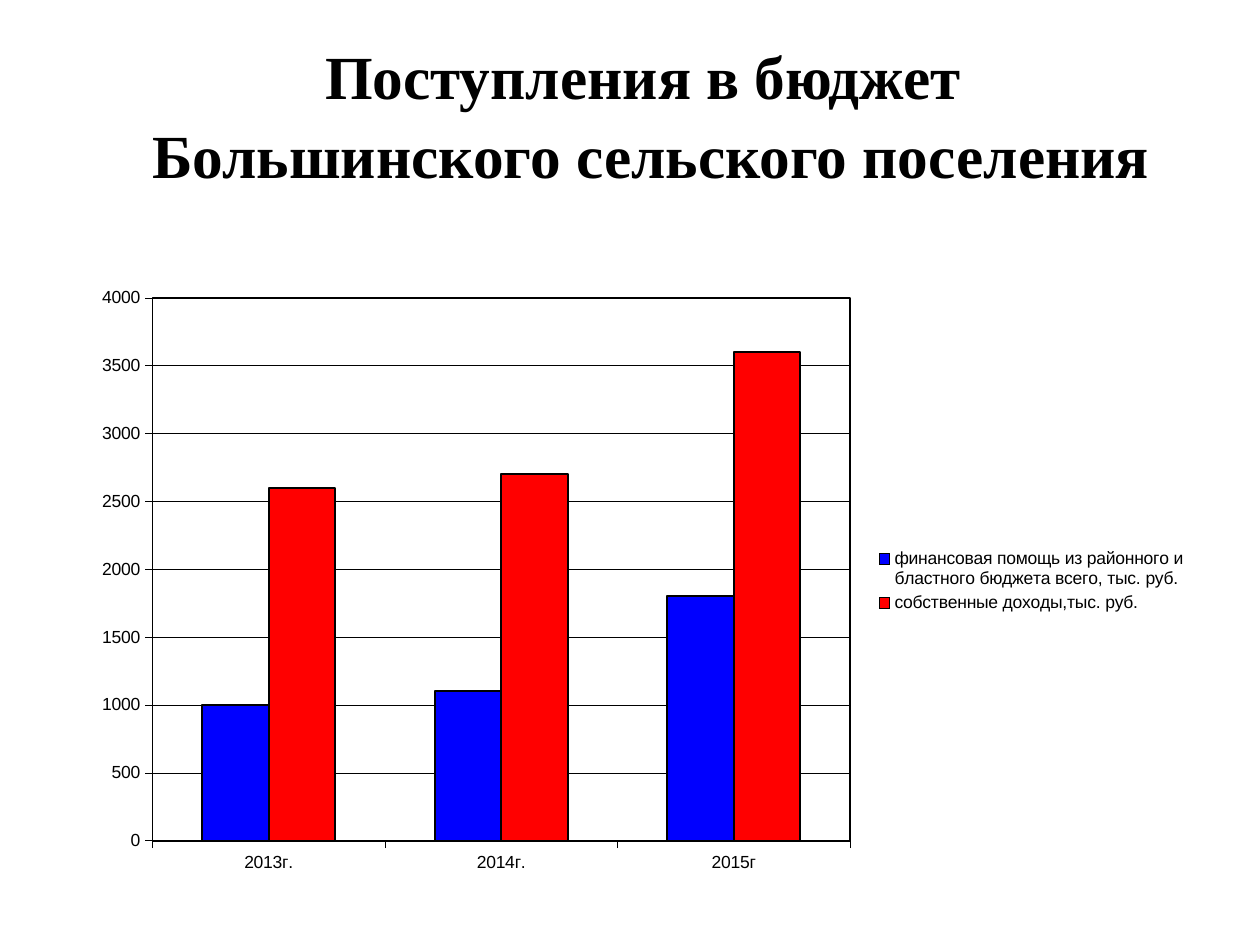
from lxml.etree import SubElement
from pptx import Presentation
from pptx.chart.data import CategoryChartData
from pptx.dml.color import RGBColor
from pptx.enum.chart import XL_CHART_TYPE, XL_LEGEND_POSITION, XL_TICK_LABEL_POSITION, XL_TICK_MARK
from pptx.enum.text import MSO_ANCHOR, PP_ALIGN
from pptx.oxml import parse_xml
from pptx.oxml.ns import nsdecls, qn
from pptx.util import Pt

EMU_PER_PX = 914400 / 126
BLACK = RGBColor(0, 0, 0)
BLUE = RGBColor(0, 0, 255)
RED = RGBColor(255, 0, 0)

TITLE_LINES = ["Поступления в бюджет ", "Большинского сельского поселения"]
YEARS = ["2013г.", "2014г.", "2015г"]
SERIES = [
    ("финансовая помощь из районного и бластного бюджета всего, тыс. руб.", [1000, 1100, 1800], BLUE),
    ("собственные доходы,тыс. руб.", [2600, 2700, 3600], RED),
]


def px(length):
    return round(length * EMU_PER_PX)


def set_line(line, width):
    line.color.rgb = BLACK
    line.width = Pt(width)


def add_title(slide, left, top, width, height):
    box = slide.shapes.add_textbox(px(left), px(top), px(width), px(height))
    frame = box.text_frame
    frame.word_wrap = True
    frame.vertical_anchor = MSO_ANCHOR.TOP
    frame.text = "\n".join(TITLE_LINES)
    for para in frame.paragraphs:
        para.alignment = PP_ALIGN.CENTER
        para.space_before = Pt(3)
        para.font.name = "Times New Roman"
        para.font.size = Pt(35)
        para.font.bold = True
        para.font.color.rgb = BLACK


def make_layout(x, y, width, height, inner=False):
    layout = parse_xml(f"<c:layout {nsdecls('c')}><c:manualLayout/></c:layout>")
    settings = [("layoutTarget", "inner")] if inner else []
    settings += [("xMode", "edge"), ("yMode", "edge"), ("x", x), ("y", y), ("w", width), ("h", height)]
    for tag, value in settings:
        SubElement(layout[0], qn(f"c:{tag}"), val=str(value))
    return layout


def place_plot(chart):
    plot_area = chart.element.find(f".//{qn('c:plotArea')}")
    for layout in plot_area.findall(qn("c:layout")):
        plot_area.remove(layout)
    plot_area.insert(0, make_layout(0.064, 0.036, 0.624, 0.89, inner=True))
    plot_area.append(parse_xml(
        f"<c:spPr {nsdecls('c', 'a')}><a:noFill/><a:ln w='{Pt(1)}'>"
        f"<a:solidFill><a:srgbClr val='{BLACK}'/></a:solidFill></a:ln></c:spPr>"
    ))


def add_legend(chart):
    chart.has_legend = True
    legend = chart.legend
    legend.position = XL_LEGEND_POSITION.RIGHT
    legend.include_in_layout = False
    element = legend._element
    for layout in element.findall(qn("c:layout")):
        element.remove(layout)
    element.find(qn("c:legendPos")).addnext(make_layout(0.71, 0.44, 0.28, 0.12))


def style_axes(chart):
    for axis in (chart.category_axis, chart.value_axis):
        axis.major_tick_mark = XL_TICK_MARK.OUTSIDE
        axis.minor_tick_mark = XL_TICK_MARK.NONE
        set_line(axis.format.line, 0.25)
    chart.category_axis.tick_label_position = XL_TICK_LABEL_POSITION.LOW
    values = chart.value_axis
    values.minimum_scale = 0
    values.maximum_scale = 4000
    values.major_unit = 500
    values.has_major_gridlines = True
    set_line(values.major_gridlines.format.line, 0.25)


def add_budget_chart(slide, left, top, width, height):
    data = CategoryChartData()
    data.categories = YEARS
    for name, values, _ in SERIES:
        data.add_series(name, values)
    frame = slide.shapes.add_chart(
        XL_CHART_TYPE.COLUMN_CLUSTERED, px(left), px(top), px(width), px(height), data
    )
    chart = frame.chart
    chart.has_title = False
    chart.font.name = "Arial"
    chart.font.size = Pt(10)
    chart.font.color.rgb = BLACK
    plot = chart.plots[0]
    plot.gap_width = 150
    plot.overlap = 0
    plot.vary_by_categories = False
    for series, (_, _, color) in zip(plot.series, SERIES):
        series.format.fill.solid()
        series.format.fill.fore_color.rgb = color
        set_line(series.format.line, 1)
    style_axes(chart)
    place_plot(chart)
    add_legend(chart)


def main():
    deck = Presentation()
    deck.slide_width = px(1260)
    deck.slide_height = px(945)
    slide = deck.slides.add_slide(deck.slide_layouts[6])
    add_title(slide, 84, 32, 1134, 237)
    add_budget_chart(slide, 81, 276, 1118, 610)
    deck.save("out.pptx")


if __name__ == "__main__":
    main()
